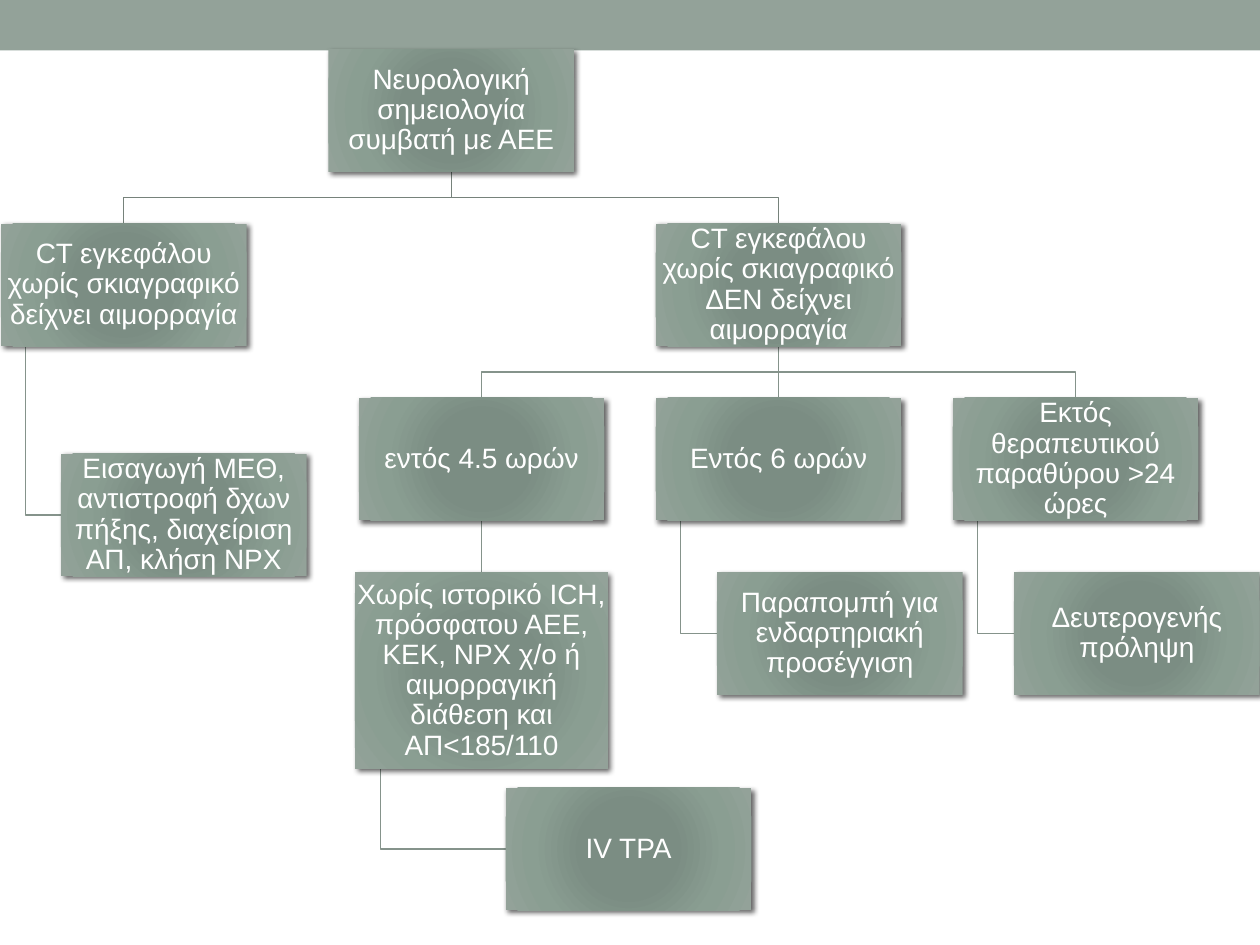
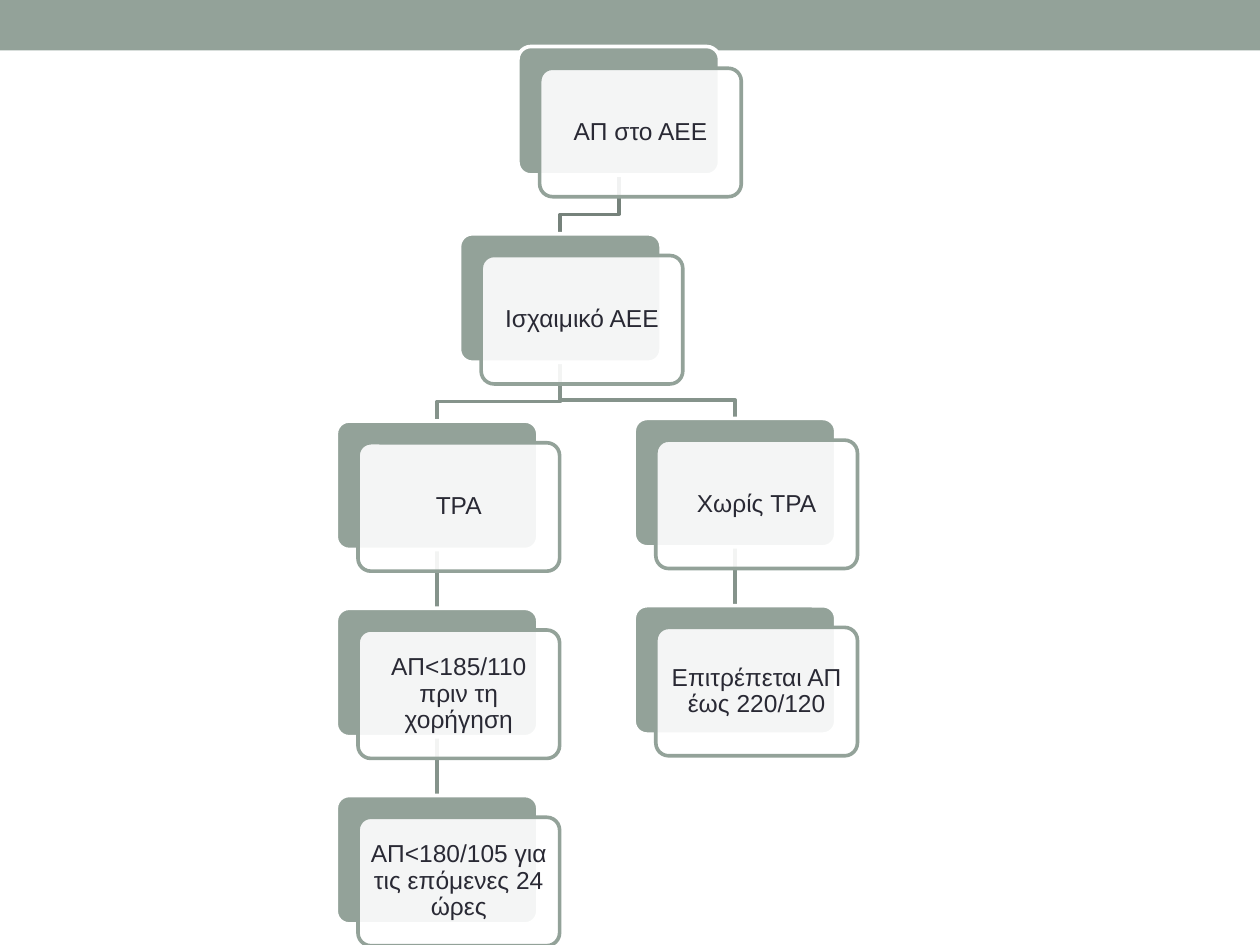
from collections.abc import Callable
from dataclasses import dataclass
from enum import Enum

from lxml.etree import SubElement
from pptx import Presentation
from pptx.dml.color import RGBColor
from pptx.enum.shapes import MSO_CONNECTOR, MSO_SHAPE
from pptx.enum.text import MSO_ANCHOR, PP_ALIGN
from pptx.oxml.ns import qn
from pptx.shapes.autoshape import Shape
from pptx.slide import Slide, SlideLayout
from pptx.text.text import TextFrame
from pptx.util import Pt

SAGE = RGBColor(0x93, 0xA2, 0x99)
WHITE = RGBColor(0xFF, 0xFF, 0xFF)
BLACK = RGBColor(0, 0, 0)
INK = RGBColor(0x29, 0x29, 0x34)
ROOT_LINE = RGBColor(0x76, 0x82, 0x7B)
BRANCH_LINE = RGBColor(0x85, 0x93, 0x8B)
STEP_GRADIENT = (
    (0, RGBColor(0x7B, 0x8E, 0x82)),
    (34, RGBColor(0x7B, 0x8D, 0x83)),
    (70, RGBColor(0x8A, 0x9E, 0x92)),
    (100, SAGE),
)
FONT = "Arial"
SLIDE_WIDTH, SLIDE_HEIGHT, BAND_HEIGHT = 720, 540, 28.8

STEP_WIDTH, STEP_HEIGHT = 140.4, 70
STEP_TOPS = [28.2 + 99.6 * row for row in range(4)]
STEP_COLUMNS = [205 + 169.7 * column for column in range(3)]
STEP_INDENT = 44  # shift of a step that hangs from its parent's left edge

CARD_WIDTH, CARD_HEIGHT = 115.2, 73.4
CARD_TOPS = [26.6 + 107 * row for row in range(5)]
CARD_OFFSET = 12.4
CARD_LINE = 2.08
TPA_LEFT, NO_TPA_LEFT, NO_TPA_RISE = 192.2, 362.4, 1.5


@dataclass(frozen=True)
class Box:
    text: str
    left: float
    top: float
    width: float
    height: float

    @property
    def center(self) -> float:
        return self.left + self.width / 2

    @property
    def bottom(self) -> float:
        return self.top + self.height


class Route(Enum):
    STRAIGHT = "bottom to top"
    ELBOW = "bottom to top with two bends"
    HOOK = "bottom left corner to left side"


@dataclass(frozen=True)
class Link:
    parent: str
    child: str
    route: Route
    color: RGBColor = BRANCH_LINE


@dataclass(frozen=True)
class Tree:
    boxes: dict[str, Box]
    links: list[Link]
    draw_box: Callable[[Slide, Box], Shape]
    line_width: float
    bend: float  # share of the gap above an elbow's crossbar


def step(text: str, left: float, top: float,
         width: float = STEP_WIDTH, height: float = STEP_HEIGHT) -> Box:
    return Box(text, left, top, width, height)


def card(text: str, left: float, top: float) -> Box:
    return Box(text, left, top, CARD_WIDTH, CARD_HEIGHT)


def write_text(frame: TextFrame, text: str, *, size: float,
               color: RGBColor, inset: float) -> None:
    frame.word_wrap = True
    frame.vertical_anchor = MSO_ANCHOR.MIDDLE
    frame.margin_left = frame.margin_right = Pt(inset)
    frame.margin_top = frame.margin_bottom = Pt(inset)
    paragraph = frame.paragraphs[0]
    paragraph.alignment = PP_ALIGN.CENTER
    paragraph.line_spacing = 0.9
    run = paragraph.add_run()
    run.text = text
    run.font.name = FONT
    run.font.size = Pt(size)
    run.font.color.rgb = color


def add_panel(slide: Slide, kind: MSO_SHAPE, box: Box, fill: RGBColor,
              line: RGBColor | None = None, shift: float = 0) -> Shape:
    panel = slide.shapes.add_shape(kind, Pt(box.left + shift), Pt(box.top + shift),
                                   Pt(box.width), Pt(box.height))
    panel.shadow.inherit = False
    panel.fill.solid()
    panel.fill.fore_color.rgb = fill
    if line is None:
        panel.line.fill.background()
    else:
        panel.line.color.rgb = line
        panel.line.width = Pt(CARD_LINE)
    if kind == MSO_SHAPE.ROUNDED_RECTANGLE:
        panel.adjustments[0] = 0.1
    return panel


def add_color(parent, color: RGBColor, alpha: int | None = None) -> None:
    node = SubElement(parent, qn("a:srgbClr"), val=str(color))
    if alpha is not None:
        SubElement(node, qn("a:alpha"), val=str(alpha * 1000))


def shade_step(panel: Shape) -> None:
    """Give a step its radial gradient and its drop shadow."""
    properties = panel.element.spPr
    solid = properties.find(qn("a:solidFill"))
    gradient = SubElement(properties, qn("a:gradFill"), rotWithShape="1")
    stops = SubElement(gradient, qn("a:gsLst"))
    for position, color in STEP_GRADIENT:
        add_color(SubElement(stops, qn("a:gs"), pos=str(position * 1000)), color)
    circle = SubElement(gradient, qn("a:path"), path="circle")
    SubElement(circle, qn("a:fillToRect"), {side: "100000" for side in "ltrb"})
    properties.replace(solid, gradient)
    shadow = SubElement(properties.find(qn("a:effectLst")), qn("a:outerShdw"),
                        blurRad=str(Pt(3)), dist=str(Pt(2)), dir=str(45 * 60000),
                        rotWithShape="0")
    add_color(shadow, BLACK, alpha=60)


def draw_step(slide: Slide, box: Box) -> Shape:
    panel = add_panel(slide, MSO_SHAPE.RECTANGLE, box, SAGE)
    shade_step(panel)
    write_text(panel.text_frame, box.text, size=16, color=WHITE, inset=0.8)
    return panel


def draw_card(slide: Slide, box: Box) -> Shape:
    """Draw a sage card with a translucent text card over it; return the sage one."""
    rounded = MSO_SHAPE.ROUNDED_RECTANGLE
    back = add_panel(slide, rounded, box, SAGE, WHITE)
    front = add_panel(slide, rounded, box, WHITE, SAGE, CARD_OFFSET)
    white = front.element.spPr.find(qn("a:solidFill"))[0]
    SubElement(white, qn("a:alpha"), val="90000")
    write_text(front.text_frame, box.text, size=14, color=INK, inset=4.3)
    return back


def bent_points(start: Box, end: Box, route: Route,
                bend: float) -> list[tuple[float, float]]:
    if route is Route.HOOK:
        x = start.left + start.width / 10
        y = end.top + end.height / 2
        return [(x, start.bottom), (x, y), (end.left, y)]
    crossbar = start.bottom + bend * (end.top - start.bottom)
    return [(start.center, start.bottom), (start.center, crossbar),
            (end.center, crossbar), (end.center, end.top)]


def draw_link(slide: Slide, tree: Tree, link: Link, panels: dict[str, Shape]) -> None:
    if link.route is Route.STRAIGHT:
        line = slide.shapes.add_connector(MSO_CONNECTOR.STRAIGHT, 0, 0, 0, 0)
        line.begin_connect(panels[link.parent], 2)
        line.end_connect(panels[link.child], 0)
        SubElement(line.element.spPr, qn("a:effectLst"))
    else:
        start, *rest = [
            (Pt(x), Pt(y)) for x, y in bent_points(
                tree.boxes[link.parent], tree.boxes[link.child], link.route, tree.bend)
        ]
        builder = slide.shapes.build_freeform(*start)
        builder.add_line_segments(rest, close=False)
        line = builder.convert_to_shape()
        line.fill.background()
        line.shadow.inherit = False
    line.line.color.rgb = link.color
    line.line.width = Pt(tree.line_width)
    # Links lie behind every box, after the two group property elements.
    line.element.getparent().insert(2, line.element)


def draw_tree(slide: Slide, tree: Tree) -> None:
    panels = {name: tree.draw_box(slide, box) for name, box in tree.boxes.items()}
    for link in tree.links:
        draw_link(slide, tree, link, panels)


def add_layout_band(slide: Slide, layout: SlideLayout) -> None:
    """Draw the top band and move it to the layout, so that all slides show it."""
    band = add_panel(slide, MSO_SHAPE.RECTANGLE,
                     Box("", 0, 0, SLIDE_WIDTH, BAND_HEIGHT), SAGE)
    layout.shapes.element.insert(2, band.element)


LEFT, MIDDLE, RIGHT = STEP_COLUMNS
STROKE_PATHWAY = Tree(
    boxes={
        "signs": step("Νευρολογική σημειολογία συμβατή με ΑΕΕ", 187.7, STEP_TOPS[0]),
        "bleeding": step("CT εγκεφάλου χωρίς σκιαγραφικό δείχνει αιμορραγία",
                         0.5, STEP_TOPS[1]),
        "admission": step("Εισαγωγή ΜΕΘ, αντιστροφή δχων πήξης, διαχείριση ΑΠ, κλήση ΝΡΧ",
                          34.8, 259.2),
        "no bleeding": step("CT εγκεφάλου χωρίς σκιαγραφικό ΔΕΝ δείχνει αιμορραγία",
                            MIDDLE, STEP_TOPS[1]),
        "4.5 hours": step("εντός 4.5 ωρών", LEFT, STEP_TOPS[2]),
        "criteria": step("Χωρίς ιστορικό ICH, πρόσφατου ΑΕΕ, ΚΕΚ, ΝΡΧ χ/ο ή "
                         "αιμορραγική διάθεση και ΑΠ<185/110",
                         LEFT - 2.2, STEP_TOPS[3], 144.8, 112.3),
        "tpa": step("IV TPA", 289, 450.2),
        "6 hours": step("Εντός 6 ωρών", MIDDLE, STEP_TOPS[2]),
        "referral": step("Παραπομπή για ενδαρτηριακή προσέγγιση",
                         MIDDLE + 35, STEP_TOPS[3]),
        "too late": step("Εκτός θεραπευτικού παραθύρου >24 ώρες", RIGHT, STEP_TOPS[2]),
        "prevention": step("Δευτερογενής πρόληψη", RIGHT + 35, STEP_TOPS[3]),
    },
    links=[
        Link("signs", "bleeding", Route.ELBOW, ROOT_LINE),
        Link("signs", "no bleeding", Route.ELBOW, ROOT_LINE),
        Link("bleeding", "admission", Route.HOOK),
        Link("no bleeding", "4.5 hours", Route.ELBOW),
        Link("no bleeding", "6 hours", Route.STRAIGHT),
        Link("no bleeding", "too late", Route.ELBOW),
        Link("4.5 hours", "criteria", Route.STRAIGHT),
        Link("criteria", "tpa", Route.HOOK),
        Link("6 hours", "referral", Route.HOOK),
        Link("too late", "prevention", Route.HOOK),
    ],
    draw_box=draw_step, line_width=0.75, bend=0.5,
)

PRESSURE_TARGETS = Tree(
    boxes={
        "pressure": card("ΑΠ στο ΑΕΕ", 296, CARD_TOPS[0]),
        "ischemic": card("Ισχαιμικό ΑΕΕ", 262.6, CARD_TOPS[1]),
        "tpa": card("TPA", TPA_LEFT, CARD_TOPS[2]),
        "before": card("ΑΠ<185/110 πριν τη χορήγηση", TPA_LEFT, CARD_TOPS[3]),
        "after": card("ΑΠ<180/105 για τις επόμενες 24 ώρες", TPA_LEFT, CARD_TOPS[4]),
        "no tpa": card("Χωρίς TPA", NO_TPA_LEFT, CARD_TOPS[2] - NO_TPA_RISE),
        "allowed": card("Επιτρέπεται ΑΠ έως 220/120", NO_TPA_LEFT,
                        CARD_TOPS[3] - NO_TPA_RISE),
    },
    links=[
        Link("pressure", "ischemic", Route.ELBOW, ROOT_LINE),
        Link("ischemic", "tpa", Route.ELBOW),
        Link("ischemic", "no tpa", Route.ELBOW),
        Link("tpa", "before", Route.STRAIGHT),
        Link("before", "after", Route.STRAIGHT),
        Link("no tpa", "allowed", Route.STRAIGHT),
    ],
    draw_box=draw_card, line_width=CARD_LINE, bend=0.67,
)


def main() -> None:
    deck = Presentation()
    deck.slide_width, deck.slide_height = Pt(SLIDE_WIDTH), Pt(SLIDE_HEIGHT)
    blank = deck.slide_layouts[6]
    pathway, targets = (deck.slides.add_slide(blank) for _ in range(2))
    add_layout_band(pathway, blank)
    draw_tree(pathway, STROKE_PATHWAY)
    draw_tree(targets, PRESSURE_TARGETS)
    deck.save("out.pptx")


if __name__ == "__main__":
    main()
